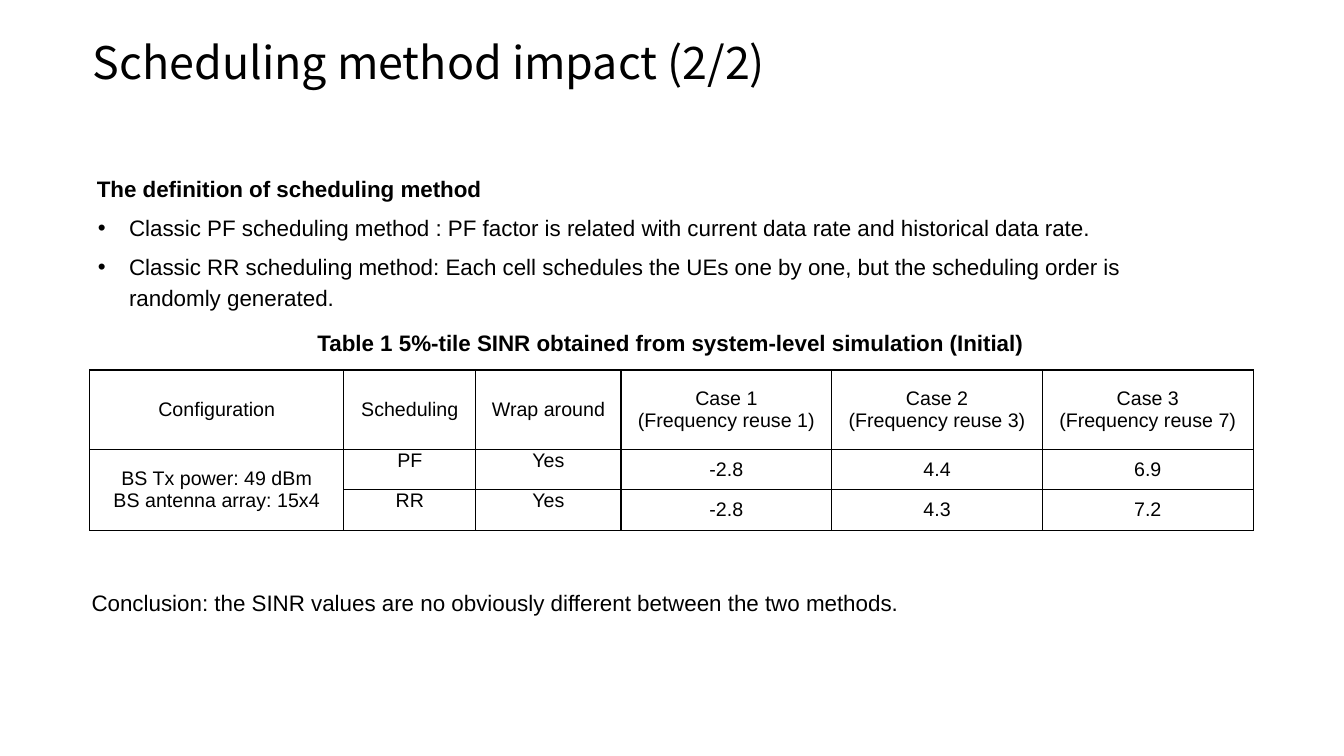
from lxml.etree import SubElement
from pptx import Presentation
from pptx.dml.color import RGBColor
from pptx.enum.text import MSO_ANCHOR as Anchor, MSO_AUTO_SIZE as AutoSize, PP_ALIGN as Align
from pptx.oxml.ns import qn
from pptx.util import Inches, Pt

COLORS = {"text": "000000", "border": "000000"}
BODY_FONT = "Arial"
TITLE_FONT = "Noto Sans CJK SC"

BODY_SPACING = {"line_spacing": 1.14, "space_before": Pt(6), "space_after": Pt(0)}
HEADING = {"bold": True}
CELL_MARGINS = {
    "margin_left": Inches(0.07), "margin_right": Inches(0.07),
    "margin_top": 0, "margin_bottom": 0,
}


def apply(target, values):
    for name, value in values.items():
        setattr(target, name, value)


class SlideBuilder:
    """Holds the text style and the slide being filled."""

    def __init__(self, deck):
        self.page = deck.slides.add_slide(deck.slide_layouts[1])

    def place(self, box, left, top, width, height):
        apply(box, {"left": Inches(left), "top": Inches(top),
                    "width": Inches(width), "height": Inches(height)})

    def add_span(self, para, text, size, font=BODY_FONT, bold=False, **layout):
        span = para.add_run()
        span.text = text
        apply(span.font, {"name": font, "size": Pt(size), "bold": bold})
        span.font.color.rgb = RGBColor.from_string(COLORS["text"])
        apply(para, layout)

    def indent(self, para, margin, first_line=0, bullet=None):
        props = para._p.get_or_add_pPr()
        props.set("marL", str(Inches(margin)))
        props.set("indent", str(Inches(first_line)))
        if bullet:
            SubElement(props, qn("a:buFont")).set("typeface", BODY_FONT)
            SubElement(props, qn("a:buChar")).set("char", bullet)
        else:
            SubElement(props, qn("a:buNone"))

    def title(self, text, *place):
        box = self.page.shapes.title
        self.place(box, *place)
        frame = box.text_frame
        apply(frame, {"margin_left": 0, "margin_right": 0, "margin_top": 0,
                      "margin_bottom": 0, "vertical_anchor": Anchor.TOP,
                      "auto_size": AutoSize.NONE, "word_wrap": True})
        self.add_span(frame.paragraphs[0], text, 32, TITLE_FONT,
                      alignment=Align.LEFT, line_spacing=Pt(34.3))

    def body(self, heading, items, *place):
        box = self.page.placeholders[1]
        self.place(box, *place)
        frame = box.text_frame
        apply(frame, {"auto_size": AutoSize.NONE, "vertical_anchor": Anchor.TOP})
        para = frame.paragraphs[0]
        self.add_span(para, heading, 16, **HEADING, **BODY_SPACING)
        self.indent(para, 0.01)
        for item in items:
            para = frame.add_paragraph()
            self.add_span(para, item, 16, **BODY_SPACING)
            self.indent(para, 0.33, -0.31, "•")

    def text(self, text, *place, margin=0, **style):
        box = self.page.shapes.add_textbox(0, 0, 0, 0)
        self.place(box, *place)
        box.text_frame.word_wrap = True
        para = box.text_frame.paragraphs[0]
        self.add_span(para, text, 16, **style)
        self.indent(para, margin)

    def border(self, cell):
        props = cell._tc.get_or_add_tcPr()
        for side in ("lnL", "lnR", "lnT", "lnB"):
            line = SubElement(props, qn(f"a:{side}"), w=str(Pt(1)))
            fill = SubElement(line, qn("a:solidFill"))
            SubElement(fill, qn("a:srgbClr")).set("val", COLORS["border"])

    def table(self, rows, left, top, widths, heights, top_anchored):
        frame = self.page.shapes.add_table(
            len(rows), len(widths), Inches(left), Inches(top),
            Inches(sum(widths)), Inches(sum(heights)))
        table = frame.table
        apply(table, {"first_row": False, "horz_banding": False})
        for column, width in zip(table.columns, widths):
            column.width = Inches(width)
        for row, height in zip(table.rows, heights):
            row.height = Inches(height)
        for r, row in enumerate(rows):
            for c, text in enumerate(row):
                cell = table.cell(r, c)
                at_top = r > 0 and c in top_anchored
                apply(cell, CELL_MARGINS)
                cell.vertical_anchor = Anchor.TOP if at_top else Anchor.MIDDLE
                self.border(cell)
                cell.fill.background()
                for i, line in enumerate(text.split("\n")):
                    words = cell.text_frame
                    para = words.add_paragraph() if i else words.paragraphs[0]
                    if line:
                        self.add_span(para, line, 14, alignment=Align.CENTER)
        return table


def main():
    deck = Presentation()
    apply(deck, {"slide_width": Inches(13.33), "slide_height": Inches(7.5)})
    slide = SlideBuilder(deck)

    # Title and definitions
    slide.title("Scheduling method impact (2/2)", 0.92, 0.4, 11.5, 1.45)
    slide.body(
        "The definition of scheduling method",
        ["Classic PF scheduling method : PF factor is related with current data rate "
         "and historical data rate.",
         "Classic RR scheduling method: Each cell schedules the UEs one by one, but the "
         "scheduling order is randomly generated."],
        0.85, 1.65, 11.33, 1.5)

    # Results table; the configuration covers both scheduling rows
    cases = [f"Case {number}\n(Frequency reuse {reuse})"
             for number, reuse in ((1, 1), (2, 3), (3, 7))]
    results = slide.table(
        [["Configuration", "Scheduling", "Wrap around", *cases],
         ["BS Tx power: 49 dBm\nBS antenna array: 15x4", "PF", "Yes", "-2.8", "4.4", "6.9"],
         ["", "RR", "Yes", "-2.8", "4.3", "7.2"]],
        0.89, 3.67, [2.52, 1.31, 1.44] + [2.09] * 3, [0.79, 0.4, 0.4],
        top_anchored=(1, 2))
    results.cell(1, 0).merge(results.cell(2, 0))

    # Table caption and conclusion
    slide.text("Table 1 5%-tile SINR obtained from system-level simulation (Initial)",
               2.34, 3.22, 8.62, 0.37, alignment=Align.CENTER,
               space_before=Pt(3), space_after=Pt(9), **HEADING)
    slide.text("Conclusion: the SINR values are no obviously different between the two methods.",
               0.8, 5.76, 11.33, 0.38, margin=0.01, **BODY_SPACING)

    deck.save("out.pptx")


if __name__ == "__main__":
    main()
